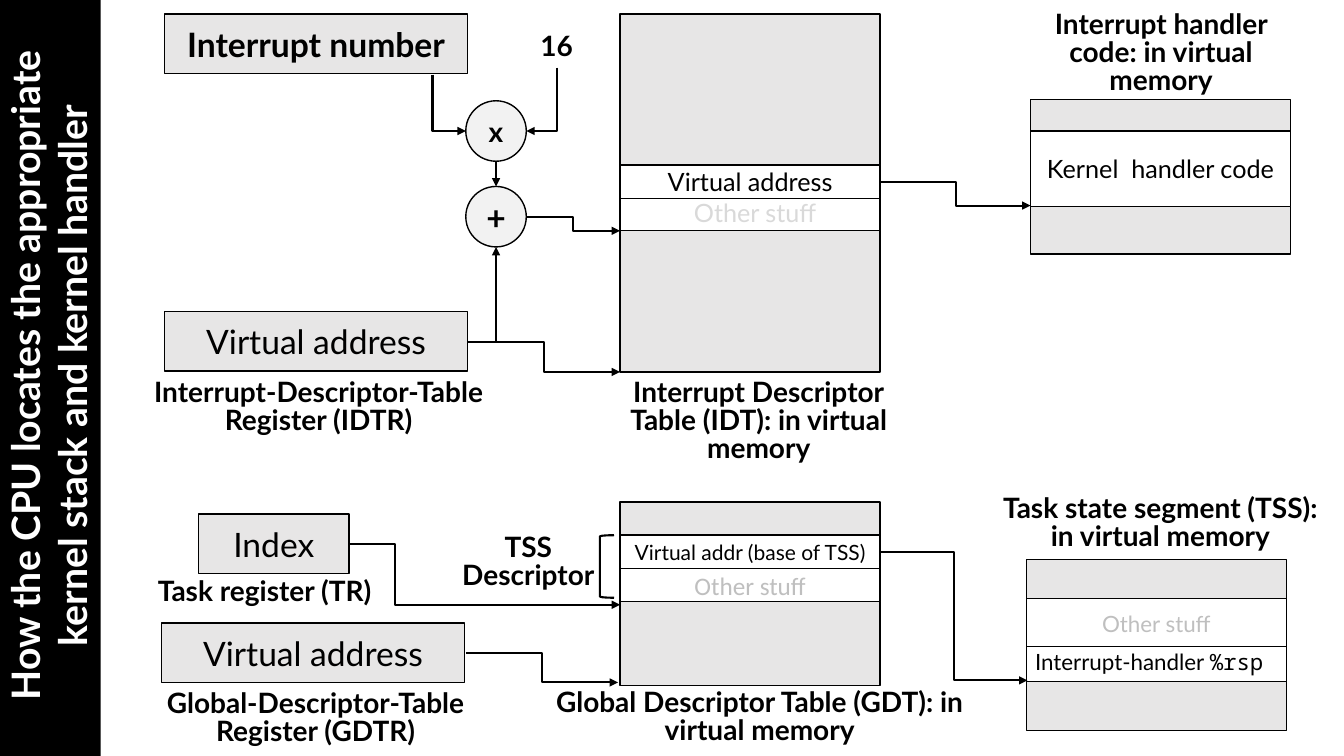
from lxml import etree
from pptx import Presentation
from pptx import util as u
from pptx.dml.color import RGBColor
from pptx.enum import shapes, text
from pptx.oxml.ns import qn

GREY, WHITE, BLACK = "E7E6E6", "FFFFFF", "000000"
TABLE_WIDTH = 2.58
RECTANGLE = shapes.MSO_SHAPE.RECTANGLE


def color(value):
    return RGBColor.from_string(value)


def inches(*values):
    return [u.Inches(value) for value in values]


# Basic parts
def write(shape, content, size=20, ink=BLACK, bold=False, font="Lato",
          spacing=None, anchor=text.MSO_ANCHOR.MIDDLE):
    """Fill a shape with centred text; content is a string or (text, font) runs."""
    frame = shape.text_frame
    frame.word_wrap = True
    frame.vertical_anchor = anchor
    paragraphs = content.split("\n") if isinstance(content, str) else [content]
    for index, runs in enumerate(paragraphs):
        paragraph = frame.add_paragraph() if index else frame.paragraphs[0]
        paragraph.alignment = text.PP_ALIGN.CENTER
        if spacing:
            paragraph.line_spacing = u.Pt(spacing)
        for words, face in [(runs, font)] if isinstance(runs, str) else runs:
            run = paragraph.add_run()
            run.text = words
            styles = {"name": face, "size": u.Pt(size), "bold": bold}
            for name, value in styles.items():
                setattr(run.font, name, value)
            run.font.color.rgb = color(ink)


def add_block(slide, left, top, width, height, content="", fill=GREY,
              kind=RECTANGLE, line=1, **style):
    shape = slide.shapes.add_shape(kind, *inches(left, top, width, height))
    shape.shadow.inherit = False
    if fill:
        shape.fill.solid()
        shape.fill.fore_color.rgb = color(fill)
    else:
        shape.fill.background()
    if line:
        shape.line.color.rgb = color(BLACK)
        shape.line.width = u.Pt(line)
    else:
        shape.line.fill.background()
    if content:
        write(shape, content, **style)
    return shape


def add_text(slide, left, top, width, height, content, **style):
    shape = slide.shapes.add_textbox(*inches(left, top, width, height))
    write(shape, content, anchor=text.MSO_ANCHOR.TOP, **style)
    shape.text_frame.auto_size = text.MSO_AUTO_SIZE.SHAPE_TO_FIT_TEXT


def add_label(slide, left, top, width, content):
    lines = 3 if "\n" in content or content.startswith("Interrupt handler") else 2
    height = 0.38 if len(content) < 20 and " D" not in content else 0.1 + 0.28 * lines
    add_text(slide, left, top, width, height, content, bold=True, spacing=20)


def add_line(slide, start, end, elbow=False, width=1.5, arrow=True, bend=None):
    kind = shapes.MSO_CONNECTOR.ELBOW if elbow else shapes.MSO_CONNECTOR.STRAIGHT
    connector = slide.shapes.add_connector(kind, *inches(*start, *end))
    connector.line.color.rgb = color(BLACK)
    connector.line.width = u.Pt(width)
    if arrow:
        etree.SubElement(connector.line._get_or_add_ln(), qn("a:tailEnd"), type="triangle")
    properties = connector._element.spPr
    etree.SubElement(properties, qn("a:effectLst"))
    if bend:
        guides = properties.find(qn("a:prstGeom")).get_or_add_avLst()
        etree.SubElement(guides, qn("a:gd"), name="adj1", fmla=f"val {round(bend * 100000)}")
    return connector


def add_corner(slide, start, end):
    """Arrow that runs down from start, then sideways to end."""
    across, down = abs(end[0] - start[0]), end[1] - start[1]
    left = (start[0] + end[0] - down) / 2
    top = (start[1] + end[1] - across) / 2
    connector = add_line(slide, (left, top), (left + down, top + across), elbow=True)
    properties = connector._element.spPr
    properties.find(qn("a:prstGeom")).set("prst", "bentConnector2")
    frame = properties.find(qn("a:xfrm"))
    to_right = end[0] > start[0]
    frame.set("rot", str((270 if to_right else 90) * 60000))
    if to_right:
        frame.set("flipH", "1")


# Regions
def add_title(slide, left, top, width, height):
    """Vertical band: the shape is laid flat about the band's centre, then turned."""
    band = add_block(slide, left + (width - height) / 2, top + (height - width) / 2,
                     height, width,
                     "How the CPU locates the appropriate kernel stack and kernel handler",
                     fill=BLACK, line=0, size=28, ink=WHITE, bold=True,
                     anchor=text.MSO_ANCHOR.TOP)
    band.rotation = 270


def add_register(slide, left, top, width, value, label="", label_left=-0.31,
                 label_top=0.63, label_width=3.68, bold=False):
    add_block(slide, left, top, width, 0.59, value, size=24, bold=bold)
    if label:
        add_label(slide, left + label_left, top + label_top, label_width, label)


def add_index_arithmetic(slide, left, top):
    """Multiply and add circles with the arrows that feed them."""
    size, gap = 0.6, 0.25
    middle = left + size / 2
    add_text(slide, left + 0.51, top - 0.71, 0.78, 0.38, "16", bold=True, spacing=20)
    for row, (sign, points) in enumerate([("x", 20), ("+", 24)]):
        add_block(slide, left, top + row * (size + gap), size, size, sign, fill="F2F2F2",
                  kind=shapes.MSO_SHAPE.OVAL, size=points, bold=True)
    add_corner(slide, (left + 0.9, top - 0.33), (left + size, top + 0.3))
    add_corner(slide, (left - 0.33, top - 0.26), (left, top + 0.3))
    add_line(slide, (middle, top + size), (middle, top + size + gap))
    add_line(slide, (middle, top + 2.39), (middle, top + 2 * size + gap))


def add_interrupt_table(slide, left, top):
    add_label(slide, left - 0.1, top + 3.58, 2.95,
              "Interrupt Descriptor\nTable (IDT): in virtual memory")
    add_block(slide, left, top, TABLE_WIDTH, 3.55)
    add_block(slide, left, top + 1.49, TABLE_WIDTH, 0.66, fill=WHITE)
    add_block(slide, left, top + 1.5, TABLE_WIDTH, 0.33, "Virtual address",
              fill=WHITE, size=18)
    add_text(slide, left + 0.31, top + 1.77, 2.06, 0.4, "Other stuff",
             size=18, ink="D9D9D9")


def add_handler_code(slide, left, top):
    add_block(slide, left, top, TABLE_WIDTH, 1.53)
    add_label(slide, left - 0.18, top - 0.92, 2.95,
              "Interrupt handler code: in virtual memory")
    add_block(slide, left, top + 0.31, TABLE_WIDTH, 0.75, "Kernel  handler code",
              fill=WHITE, size=18)


def add_global_table(slide, left, top):
    add_label(slide, left - 0.85, top + 1.82, 4.47,
              "Global Descriptor Table (GDT): in virtual memory")
    add_block(slide, left, top, TABLE_WIDTH, 1.82)
    add_block(slide, left, top + 0.66, TABLE_WIDTH, 0.33, "Other stuff", fill=WHITE,
              size=18, ink="BFBFBF", font="Calibri")
    add_block(slide, left, top + 0.33, TABLE_WIDTH, 0.33, "Virtual addr (base of TSS)",
              fill=WHITE, size=15)
    add_block(slide, left - 0.2, top + 0.33, 0.14, 0.62, fill=None, line=1.5,
              kind=shapes.MSO_SHAPE.LEFT_BRACKET)
    add_label(slide, left - 1.72, top + 0.28, 1.62, "TSS Descriptor")


def add_task_segment(slide, left, top):
    add_block(slide, left, top, TABLE_WIDTH, 1.7)
    add_label(slide, left - 0.42, top - 0.68, 3.5,
              "Task state segment (TSS): in virtual memory")
    add_block(slide, left, top + 0.39, TABLE_WIDTH, 0.82, fill=WHITE)
    add_text(slide, left - 0.12, top + 0.83, 2.81, 0.37,
             [("Interrupt-handler ", "Lato"), ("%rsp ", "Noto Sans Mono")], size=16)
    add_line(slide, (left, top + 0.86), (left + TABLE_WIDTH, top + 0.86),
             width=0.5, arrow=False)
    add_text(slide, left + 0.62, top + 0.45, 1.34, 0.37, "Other stuff",
             size=16, ink="BFBFBF")


def add_links(slide):
    """Elbow arrows between regions: start, end, position of the bend."""
    for start, end, bend in [
        ((4.64, 3.39), (6.15, 3.69), None),
        ((5.22, 2.15), (6.15, 2.29), None),
        ((8.74, 1.81), (10.22, 2.04), None),
        ((4.62, 6.48), (6.13, 6.77), None),
        ((8.73, 5.48), (10.19, 6.75), None),
        ((3.46, 5.4), (6.15, 6), 0.17),
    ]:
        add_line(slide, start, end, elbow=True, bend=bend)


def main():
    presentation = Presentation()
    presentation.slide_width, presentation.slide_height = inches(13.33, 7.5)
    slide = presentation.slides.add_slide(presentation.slide_layouts[6])

    # Interrupt path
    add_register(slide, 1.63, 0.14, 3.01, "Interrupt number", bold=True)
    add_register(slide, 1.63, 3.09, 3.01, "Virtual address",
                 "Interrupt-Descriptor-Table Register (IDTR)")
    add_index_arithmetic(slide, 4.62, 1)
    add_interrupt_table(slide, 6.15, 0.14)
    add_handler_code(slide, 10.22, 0.99)

    # Task path
    add_register(slide, 1.97, 5.1, 1.49, "Index", "Task register (TR)",
                 label_left=-0.67, label_top=0.6, label_width=2.65)
    add_register(slide, 1.6, 6.18, 3.01, "Virtual address",
                 "Global-Descriptor-Table Register (GDTR)")
    add_global_table(slide, 6.15, 4.98)
    add_task_segment(slide, 10.18, 5.55)

    add_links(slide)
    add_title(slide, -0.04, -0.05, 1.04, 7.55)
    presentation.save("out.pptx")


if __name__ == "__main__":
    main()
